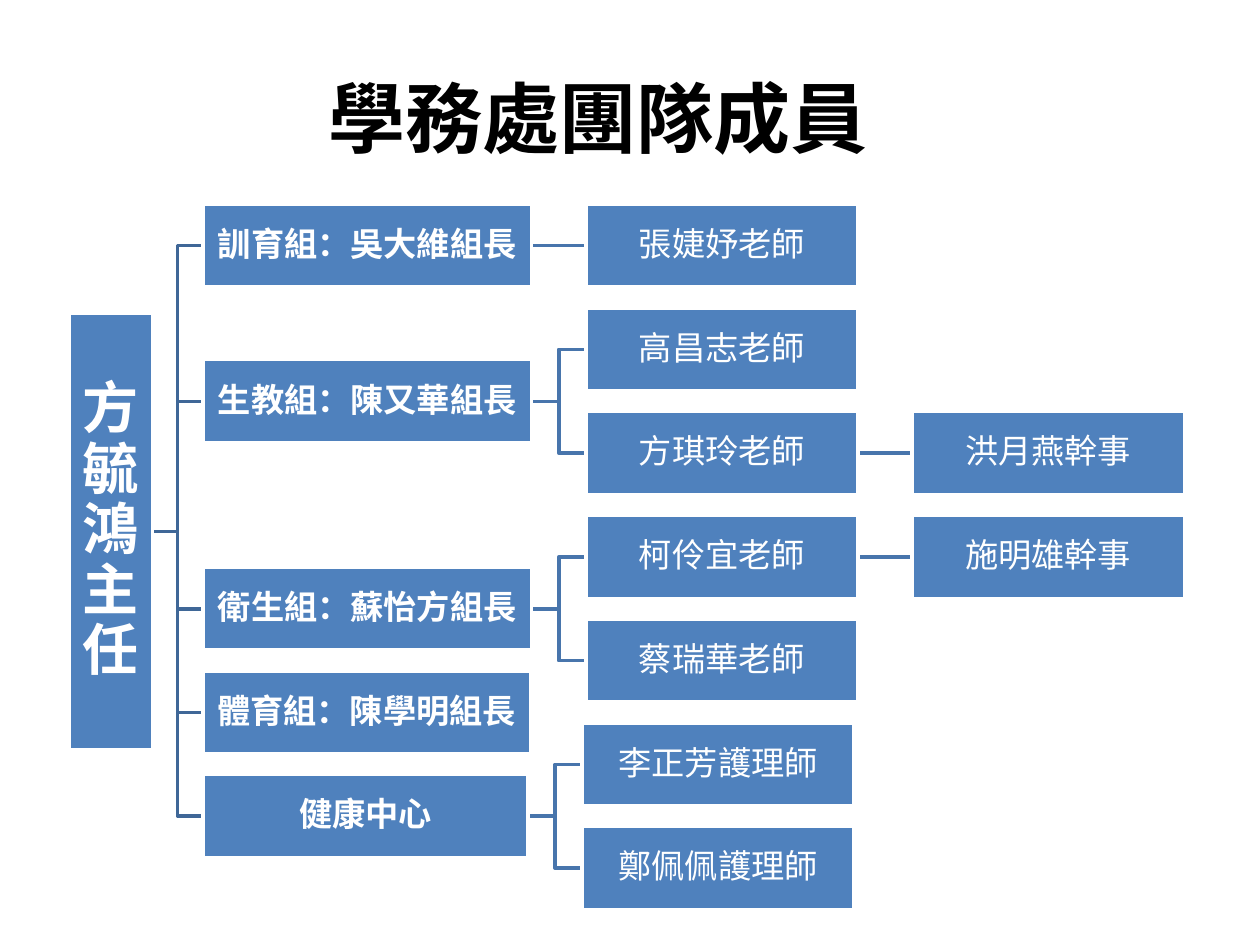
import pptx
import pptx.util
import pptx.dml.color
import pptx.enum.shapes
import pptx.enum.text
from lxml import etree

Inches = pptx.util.Inches
Pt = pptx.util.Pt
RGBColor = pptx.dml.color.RGBColor

BLACK = RGBColor(0x00, 0x00, 0x00)
WHITE = RGBColor(0xFF, 0xFF, 0xFF)
BOX_BLUE = RGBColor(0x4F, 0x81, 0xBD)
TRUNK_BLUE = RGBColor(0x3F, 0x67, 0x97)
BRANCH_BLUE = RGBColor(0x48, 0x75, 0xAC)

TITLE = "學務處團隊成員"
DIRECTOR = "方毓鴻主任"
ROW_COUNT = 7
BOX_HEIGHT = Inches(0.66)
GROUP_LEFT = Inches(1.06)
COLUMN_GAP = Inches(0.43)
MEMBER_WIDTH = Inches(2.16)
GROUPS = [
    {"name": "訓育組：吳大維組長", "row": 0, "width": Inches(2.61),
     "members": [("張婕妤老師", 0, None)]},
    {"name": "生教組：陳又華組長", "row": 1.5, "width": Inches(2.61),
     "members": [("高昌志老師", 1, None), ("方琪玲老師", 2, "洪月燕幹事")]},
    {"name": "衛生組：蘇怡方組長", "row": 3.5, "width": Inches(2.61),
     "members": [("柯伶宜老師", 3, "施明雄幹事"), ("蔡瑞華老師", 4, None)]},
    {"name": "體育組：陳學明組長", "row": 4.5, "width": Inches(2.6), "members": []},
    {"name": "健康中心", "row": 5.5, "width": Inches(2.58),
     "members": [("李正芳護理師", 5, None), ("鄭佩佩護理師", 6, None)]},
]


def set_attributes(target, values):
    """Set each named attribute of the target."""
    for name, value in values.items():
        setattr(target, name, value)


def write_text(shape, text, size, bold, color, inset, line_spacing):
    """Write one centred paragraph into a shape."""
    frame = shape.text_frame
    set_attributes(frame, {
        "word_wrap": True, "vertical_anchor": pptx.enum.text.MSO_ANCHOR.MIDDLE,
        "margin_left": inset, "margin_right": inset,
        "margin_top": inset, "margin_bottom": inset})
    paragraph = frame.paragraphs[0]
    set_attributes(paragraph, {
        "text": text, "alignment": pptx.enum.text.PP_ALIGN.CENTER,
        "line_spacing": line_spacing})
    font = paragraph.runs[0].font
    set_attributes(font, {"name": "Calibri", "size": Pt(size), "bold": bold})
    font.color.rgb = color


def add_title(slide, left, top, width, height):
    """Add the slide title in the given box."""
    shape = slide.shapes.add_textbox(left, top, width, height)
    write_text(shape, TITLE, 44, True, BLACK, Inches(0.05), 1.0)


def add_person(slide, text, left, middle, width, height=BOX_HEIGHT, size=19, bold=False):
    """Add a filled name box centred on a height."""
    shape = slide.shapes.add_shape(
        pptx.enum.shapes.MSO_SHAPE.RECTANGLE, left, middle - height // 2, width, height)
    shape.shadow.inherit = False
    shape.fill.solid()
    shape.fill.fore_color.rgb = BOX_BLUE
    shape.line.color.rgb = WHITE
    shape.line.width = Pt(2)
    write_text(shape, text, size, bold, WHITE, Inches(0.01), 0.9)


def add_link(slide, left, start, right, end, color):
    """Join two boxes with a straight or an elbowed line."""
    if start == end:
        link = slide.shapes.add_connector(
            pptx.enum.shapes.MSO_CONNECTOR.STRAIGHT, left, start, right, end)
        etree.SubElement(link._element.spPr, pptx.oxml.ns.qn("a:effectLst"))
    else:
        bend = (left + right) // 2
        builder = slide.shapes.build_freeform(left, start)
        builder.add_line_segments([(bend, start), (bend, end), (right, end)], close=False)
        link = builder.convert_to_shape()
        link.shadow.inherit = False
        link.fill.background()
    link.line.color.rgb = color
    link.line.width = Pt(2)


def add_group(slide, group, left, middle_of):
    """Add a group leader with the members and clerks to the right."""
    middle = middle_of(group["row"])
    leader_right = left + group["width"]
    member_left = leader_right + COLUMN_GAP
    member_right = member_left + MEMBER_WIDTH
    clerk_left = member_right + COLUMN_GAP
    for member, row, clerk in group["members"]:
        member_middle = middle_of(row)
        add_link(slide, leader_right, middle, member_left, member_middle, BRANCH_BLUE)
        if clerk:
            add_link(slide, member_right, member_middle, clerk_left, member_middle, BRANCH_BLUE)
            add_person(slide, clerk, clerk_left, member_middle, MEMBER_WIDTH)
        add_person(slide, member, member_left, member_middle, MEMBER_WIDTH)
    add_person(slide, group["name"], left, middle, group["width"], bold=True)


def add_team_tree(slide, left, top, height):
    """Add the tree of the director, the groups and their members."""
    pitch = (height - BOX_HEIGHT) / (ROW_COUNT - 1)

    def middle_of(row):
        """Return the centre height of a row."""
        return int(top + BOX_HEIGHT / 2 + row * pitch)

    director_middle = top + Inches(2.6)
    group_left = left + GROUP_LEFT
    for group in GROUPS:
        add_link(slide, left + BOX_HEIGHT, director_middle,
                 group_left, middle_of(group["row"]), TRUNK_BLUE)
        add_group(slide, group, group_left, middle_of)
    add_person(slide, DIRECTOR, left, director_middle, BOX_HEIGHT,
               height=Inches(3.46), size=32, bold=True)


def main():
    """Build and save the slide."""
    presentation = pptx.Presentation()
    set_attributes(presentation, {"slide_width": Inches(10), "slide_height": Inches(7.5)})
    slide = presentation.slides.add_slide(presentation.slide_layouts[6])
    add_title(slide, Inches(0.5), Inches(0.3), Inches(8.5), Inches(1.25))
    add_team_tree(slide, Inches(0.55), Inches(1.62), Inches(5.6))
    presentation.save("out.pptx")


if __name__ == "__main__":
    main()
